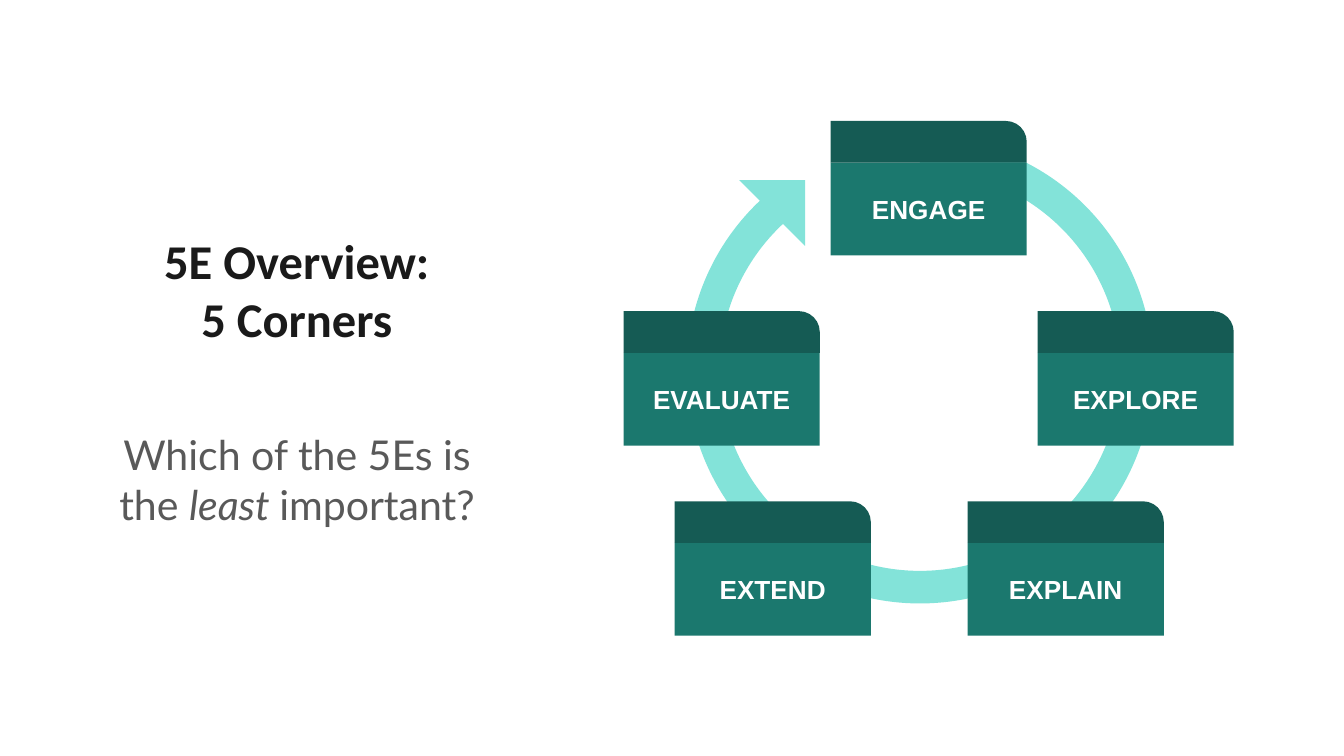
from pptx import Presentation
from pptx.dml.color import RGBColor
from pptx.enum.shapes import MSO_SHAPE
from pptx.enum.text import MSO_ANCHOR, MSO_AUTO_SIZE, PP_ALIGN
from pptx.util import Inches, Pt

COLORS = {"title": "1A1A1A", "question": "595959", "ring": "83E3D9",
          "card": "1B786E", "tab": "155B54", "label": "FFFFFF"}
TITLE = "5E Overview:\n5 Corners"
QUESTION = [("Which of the 5Es is the ", False), ("least ", True), ("important?", False)]

# label, left edge in inches, row
STAGES = [("ENGAGE", 6.18, 0), ("EVALUATE", 4.64, 1), ("EXPLAIN", 7.2, 2),
          ("EXTEND", 5.02, 2), ("EXPLORE", 7.72, 1)]

SLIDE_WIDTH = 10
SLIDE_HEIGHT = SLIDE_WIDTH * 9 / 16
TEXT_LEFT, TEXT_WIDTH = 0.64, 3.14
FIRST_ROW, LAST_ROW = 0.9, 3.73
ROW_STEP = (LAST_ROW - FIRST_ROW) / 2
CARD_WIDTH, TAB_HEIGHT, CARD_HEIGHT = 1.46, 0.31, 0.69
DEGREE = 0.6  # one degree in adjustment units


def set_up_frame(text_frame):
    text_frame.word_wrap = True
    text_frame.auto_size = MSO_AUTO_SIZE.NONE
    text_frame.vertical_anchor = MSO_ANCHOR.MIDDLE
    text_frame.margin_left = text_frame.margin_right = Inches(0.1)
    text_frame.margin_top = text_frame.margin_bottom = Inches(0.1)


def format_text(text_frame, font_name, size, color, bold=False):
    for paragraph in text_frame.paragraphs:
        paragraph.alignment = PP_ALIGN.CENTER
        for run in paragraph.runs:
            run.font.name = font_name
            run.font.size = Pt(size)
            run.font.bold = bold
            run.font.color.rgb = RGBColor.from_string(COLORS[color])


def add_plain_shape(slide, kind, left, top, width, height, color):
    shape = slide.shapes.add_shape(
        kind, Inches(left), Inches(top), Inches(width), Inches(height))
    shape.shadow.inherit = False
    shape.fill.solid()
    shape.fill.fore_color.rgb = RGBColor.from_string(COLORS[color])
    shape.line.fill.background()
    return shape


def add_headings(slide):
    title = slide.shapes.title
    title.left, title.top = Inches(TEXT_LEFT), Inches(1.62)
    title.width, title.height = Inches(TEXT_WIDTH), Inches(1.06)
    set_up_frame(title.text_frame)
    title.text_frame.text = TITLE
    format_text(title.text_frame, "Calibri", 26, "title", bold=True)

    question = slide.shapes.add_textbox(
        Inches(TEXT_LEFT), Inches(2.69), Inches(TEXT_WIDTH), Inches(1.75))
    set_up_frame(question.text_frame)
    for text, italic in QUESTION:
        run = question.text_frame.paragraphs[0].add_run()
        run.text = text
        run.font.italic = italic
    format_text(question.text_frame, "Lato", 22, "question")


def add_ring(slide):
    ring = add_plain_shape(slide, MSO_SHAPE.BLOCK_ARC, 5.11, 1.02, 3.47, 3.47, "ring")
    ring.adjustments[0] = 90 * DEGREE
    ring.adjustments[1] = 50.2 * DEGREE
    ring.adjustments[2] = 0.07
    arrowhead = add_plain_shape(
        slide, MSO_SHAPE.RIGHT_TRIANGLE, 5.5, 1.34, 0.49, 0.49, "ring")
    ring.rotation = arrowhead.rotation = 180


def add_stage(slide, label, left, row):
    top = FIRST_ROW + row * ROW_STEP
    card = add_plain_shape(slide, MSO_SHAPE.RECTANGLE, left, top + TAB_HEIGHT,
                           CARD_WIDTH, CARD_HEIGHT, "card")
    set_up_frame(card.text_frame)
    card.text_frame.text = label
    format_text(card.text_frame, "Arial", 14, "label", bold=True)
    tab = add_plain_shape(slide, MSO_SHAPE.ROUND_1_RECTANGLE, left, top,
                          CARD_WIDTH, TAB_HEIGHT, "tab")
    tab.adjustments[0] = 0.5


def main():
    presentation = Presentation()
    presentation.slide_width = Inches(SLIDE_WIDTH)
    presentation.slide_height = Inches(SLIDE_HEIGHT)
    slide = presentation.slides.add_slide(
        presentation.slide_layouts.get_by_name("Title Only"))
    add_headings(slide)
    add_ring(slide)
    for stage in STAGES:
        add_stage(slide, *stage)
    presentation.save("out.pptx")


if __name__ == "__main__":
    main()
